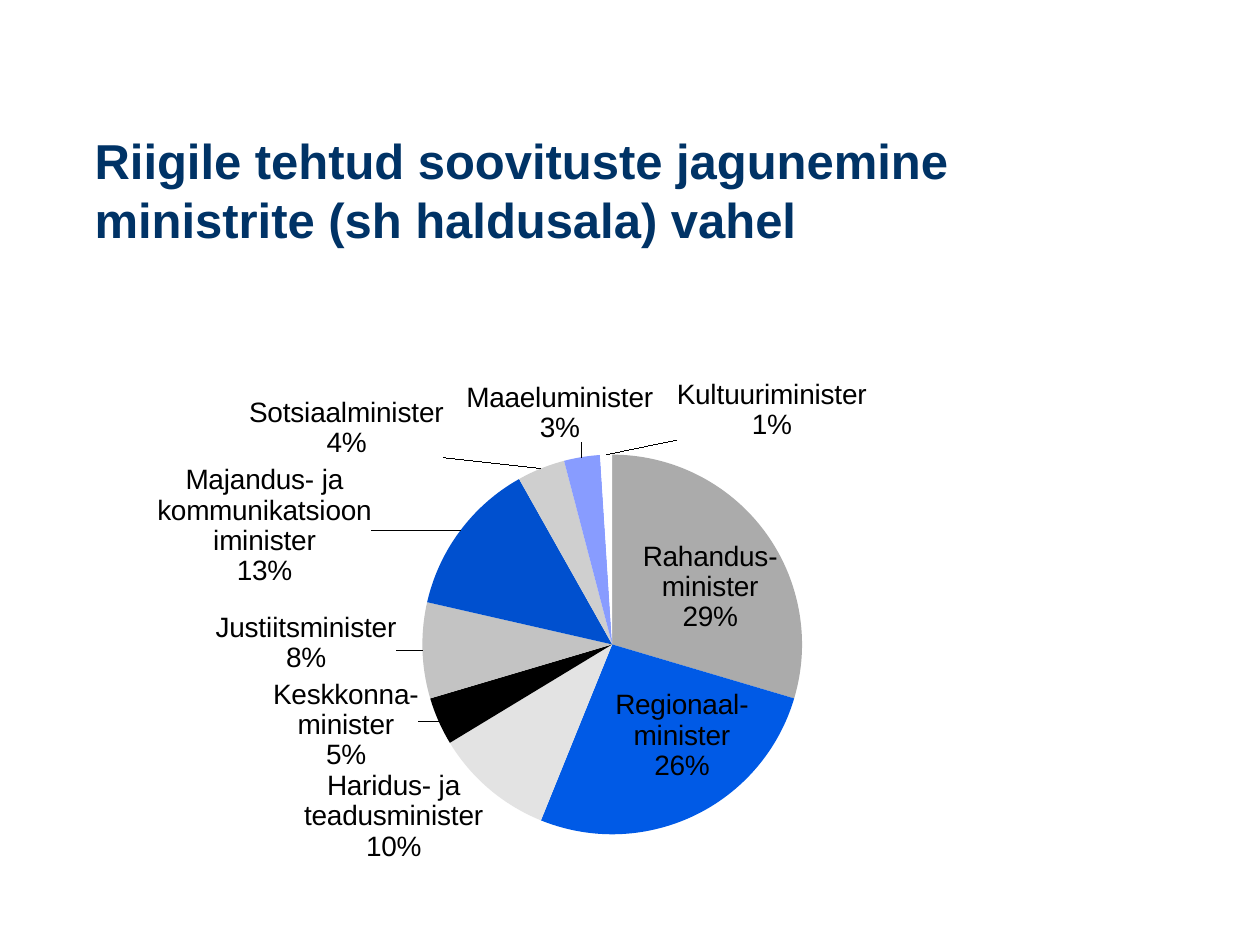
from lxml import etree
from pptx import Presentation, util as u
from pptx.chart.data import CategoryChartData
from pptx.dml.color import RGBColor
from pptx.enum import chart as ch, text as t
from pptx.oxml.ns import qn

PX = 914400 // 126
HUES = {
    "navy": "003366", "ink": "000000", "gray": "ABABAB", "blue": "005AE6",
    "pale": "E3E3E3", "black": "000000", "mid": "C3C3C3", "deep": "0050CF",
    "light": "CFCFCF", "lilac": "889CFF", "white": "FFFFFF",
}
IN, OUT = ch.XL_LABEL_POSITION.CENTER, ch.XL_LABEL_POSITION.OUTSIDE_END
PARTS = [
    ("Rahandusminister", 29, "gray", IN, (22, -1), "Rahandus-minister\n29%"),
    ("Regionaalminister", 26, "blue", IN, (29, 5), "Regionaal-minister\n26%"),
    ("Haridus- ja teadusminister", 10, "pale", OUT, (-1, -24), None),
    ("Keskkonnaminister", 4, "black", OUT, (-13, -45), "Keskkonna-minister\n5%"),
    ("Justiitsminister", 8, "mid", OUT, (-19, -8), None),
    ("Majandus- ja kommunikatsiooniminister", 13, "deep", OUT, (-82, 59), None),
    ("Sotsiaalminister", 4, "light", OUT, (-95, -4), None),
    ("Maaeluminister", 3, "lilac", OUT, (73, -7), None),
    ("Kultuuriminister", 1, "white", OUT, (166, -7), None),
]


def color(name):
    return RGBColor.from_string(HUES[name])


def style(font, size, hue="ink", bold=False):
    font.name, font.size, font.bold = "Arial", u.Pt(size), bold
    font.color.rgb = color(hue)


def write(frame, words, **form):
    frame.text = words
    for para in frame.paragraphs:
        for run in para.runs:
            style(run.font, **form)


def layout(**vals):
    node = etree.Element(qn("c:layout"))
    man = etree.SubElement(node, qn("c:manualLayout"))
    for key, val in vals.items():
        etree.SubElement(man, qn("c:" + key)).set("val", str(val))
    return node


def show(node):
    flags = {"showVal": "0", "showCatName": "1", "showPercent": "1"}
    for key, val in flags.items():
        node.find(qn("c:" + key)).set("val", val)
    sep = etree.Element(qn("c:separator"))
    sep.text = "\n"
    node.find(qn("c:showBubbleSize")).addnext(sep)


def title(slide, box, words):
    head = slide.shapes.title
    head.left, head.top, head.width, head.height = [v * PX for v in box]
    frame = head.text_frame
    frame.word_wrap = True
    frame.auto_size = t.MSO_AUTO_SIZE.NONE
    frame.vertical_anchor = t.MSO_ANCHOR.MIDDLE
    write(frame, words, size=28, hue="navy", bold=True)
    frame.paragraphs[0].alignment = t.PP_ALIGN.LEFT


def label(point, spot, shift, words, box):
    tag = point.data_label
    if words:
        write(tag.text_frame, words, size=16)
    else:
        style(tag.font, 16)
    tag.position = spot
    node = point.data_label._get_or_add_dLbl()
    show(node)
    dx, dy = shift
    move = layout(x=round(dx / box[2], 3), y=round(dy / box[3], 3))
    node.find(qn("c:idx")).addnext(move)


def pie(slide, box, ring):
    data = CategoryChartData()
    data.categories = [part[0] for part in PARTS]
    data.add_series("Series 1", [part[1] for part in PARTS])
    frame = slide.shapes.add_chart(
        ch.XL_CHART_TYPE.PIE, *[v * PX for v in box], data)
    chart = frame.chart
    chart.has_legend = chart.has_title = False
    style(chart.font, 14)
    plot = chart.plots[0]
    plot.vary_by_categories = True
    ser = plot.series[0]
    tags = ser.data_labels
    style(tags.font, 16)
    tags.show_category_name = tags.show_percentage = True
    tags.show_value = False
    tags.position = OUT
    for i, (_, _, hue, spot, shift, words) in enumerate(PARTS):
        point = ser.points[i]
        point.format.fill.solid()
        point.format.fill.fore_color.rgb = color(hue)
        point.format.line.fill.background()
        label(point, spot, shift, words, box)
    show(tags._element)
    area = chart._chartSpace.chart.plotArea
    for old in area.findall(qn("c:layout")):
        area.remove(old)
    x, y, w, h = ring
    area.insert(0, layout(
        layoutTarget="inner", xMode="edge", yMode="edge",
        x=round(x / box[2], 3), y=round(y / box[3], 3),
        w=round(w / box[2], 3), h=round(h / box[3], 3)))


def main():
    deck = Presentation()
    deck.slide_width, deck.slide_height = u.Inches(10), u.Inches(7.5)
    slide = deck.slides.add_slide(deck.slide_layouts[5])
    title(slide, (82, 126, 1071, 126),
          "Riigile tehtud soovituste jagunemine ministrite (sh haldusala) vahel")
    pie(slide, (54, 224, 1099, 665), (368, 231, 380, 380))
    deck.save("out.pptx")


if __name__ == "__main__":
    main()
